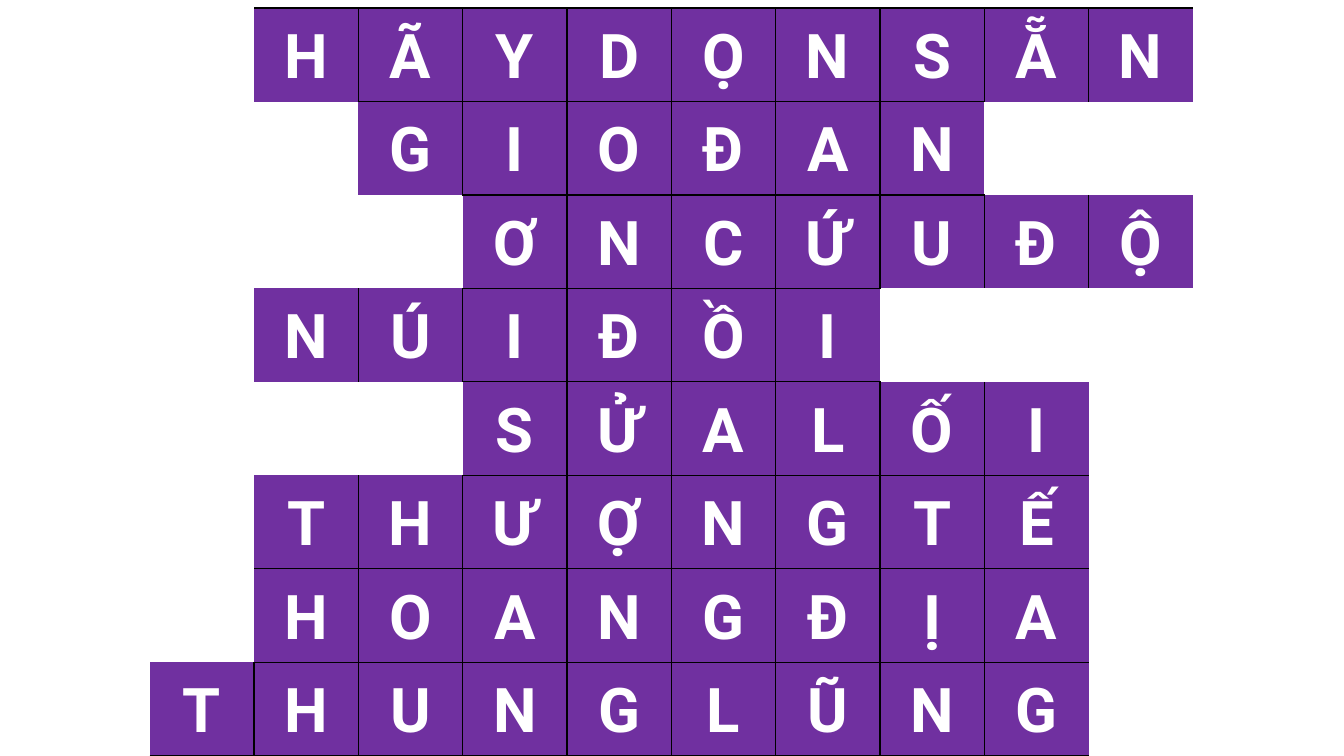
"""Build a crossword slide whose answers fill the cells of one table."""
from dataclasses import dataclass

from lxml.etree import SubElement
from pptx import Presentation
from pptx.dml.color import RGBColor
from pptx.enum.text import MSO_ANCHOR as Anchor, PP_ALIGN as Align
from pptx.oxml.ns import qn
from pptx.table import Table, _Cell as Cell
from pptx.util import Inches, Pt

PURPLE = RGBColor(0x70, 0x30, 0xA0)
WHITE = RGBColor(0xFF, 0xFF, 0xFF)
BLACK = RGBColor(0x00, 0x00, 0x00)

FONT = "Roboto"
COLUMN_COUNT = 12
COLUMN_WIDTH = Inches(12.42) // COLUMN_COUNT
GRID_LEFT, GRID_TOP, GRID_HEIGHT = Inches(0.45), Inches(0.08), Inches(7.42)
SIDES = {"lnL": (0, -1), "lnR": (0, 1), "lnT": (-1, 0), "lnB": (1, 0)}


@dataclass(frozen=True)
class Answer:
    start: int
    letters: str

    def covers(self, column: int) -> bool:
        return self.start <= column < self.start + len(self.letters)


ANSWERS = [
    Answer(2, "HÃYDỌNSẴN"),
    Answer(3, "GIOĐAN"),
    Answer(4, "ƠNCỨUĐỘ"),
    Answer(2, "NÚIĐỒI"),
    Answer(4, "SỬALỐI"),
    Answer(2, "THƯỢNGTẾ"),
    Answer(2, "HOANGĐỊA"),
    Answer(1, "THUNGLŨNG"),
]
ROW_HEIGHT = GRID_HEIGHT // len(ANSWERS)


def is_letter(row: int, column: int) -> bool:
    return ANSWERS[row].covers(column)


def has_line(row: int, column: int, down: int, across: int) -> bool:
    if not is_letter(row, column):
        return False
    neighbour_row = row + down
    if neighbour_row not in range(len(ANSWERS)):
        return True
    return is_letter(neighbour_row, column + across)


def draw_borders(cell: Cell, row: int, column: int) -> None:
    properties = cell._tc.get_or_add_tcPr()
    for side, (down, across) in SIDES.items():
        line = SubElement(properties, qn(f"a:{side}"), w=str(Pt(1)))
        if has_line(row, column, down, across):
            fill = SubElement(line, qn("a:solidFill"))
            SubElement(fill, qn("a:srgbClr"), val=str(BLACK))
        else:
            SubElement(line, qn("a:noFill"))


def write_letter(cell: Cell, letter: str) -> None:
    cell.vertical_anchor = Anchor.MIDDLE
    cell.margin_left = cell.margin_right = Inches(0.07)
    cell.margin_top = cell.margin_bottom = 0
    paragraph = cell.text_frame.paragraphs[0]
    paragraph.alignment = Align.CENTER
    paragraph.line_spacing = 1.07
    paragraph.space_after = Pt(8)
    run = paragraph.add_run()
    run.text = letter
    run.font.name = FONT
    run.font.size = Pt(44)
    run.font.bold = True
    run.font.color.rgb = WHITE


def fill_row(table: Table, row: int, answer: Answer) -> None:
    table.rows[row].height = ROW_HEIGHT
    for column in range(COLUMN_COUNT):
        cell = table.cell(row, column)
        draw_borders(cell, row, column)
        cell.fill.solid()
        cell.fill.fore_color.rgb = PURPLE if answer.covers(column) else WHITE
    for column, letter in enumerate(answer.letters, answer.start):
        write_letter(table.cell(row, column), letter)


def main() -> None:
    presentation = Presentation()
    presentation.slide_width = Inches(13.33)
    presentation.slide_height = Inches(7.5)
    slide = presentation.slides.add_slide(presentation.slide_layouts[6])
    table = slide.shapes.add_table(
        len(ANSWERS), COLUMN_COUNT, GRID_LEFT, GRID_TOP,
        COLUMN_WIDTH * COLUMN_COUNT, ROW_HEIGHT * len(ANSWERS),
    ).table
    table.first_row = table.horz_banding = False
    for table_column in table.columns:
        table_column.width = COLUMN_WIDTH
    for row, answer in enumerate(ANSWERS):
        fill_row(table, row, answer)
    presentation.save("out.pptx")


if __name__ == "__main__":
    main()
